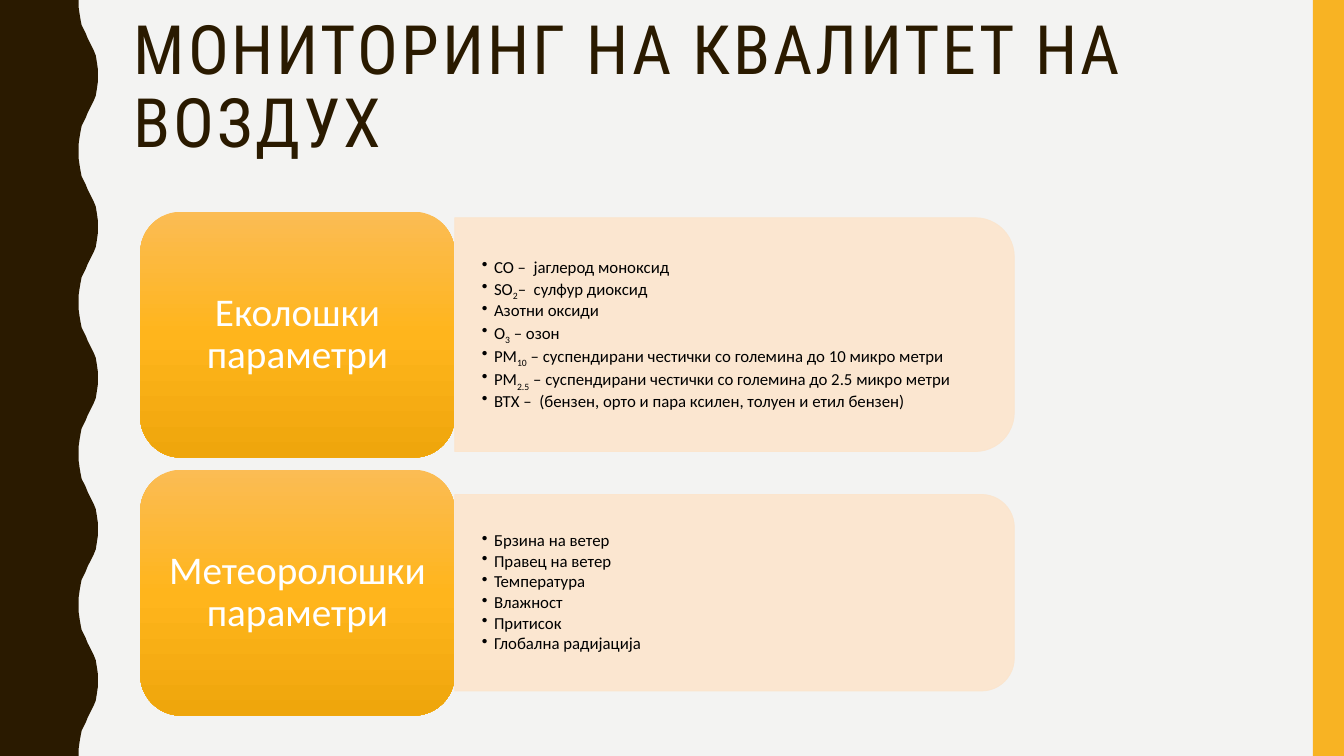
from lxml.etree import SubElement
from pptx import Presentation
from pptx.dml.color import RGBColor
from pptx.enum.shapes import MSO_SHAPE
from pptx.enum.text import MSO_ANCHOR, PP_ALIGN
from pptx.oxml.ns import qn
from pptx.util import Inches, Pt

DARK, GOLD, PEACH = "2A1A00", "F8B323", "FCE5CD"
LABEL_GRADIENT = [(0, "FBBC54"), (50, "FFB51C"), (100, "EFA60C")]
WAVE_PERIOD, WAVE_COUNT = 1.5, 5
WAVE_RISE = [(0.78, 0), (0.78, 0.07), (0.79, 0.14), (0.8, 0.2), (0.81, 0.25),
             (0.83, 0.29), (0.85, 0.33), (0.87, 0.38), (0.89, 0.42), (0.91, 0.46),
             (0.93, 0.5), (0.95, 0.55), (0.96, 0.61), (0.97, 0.68), (0.97, 0.75)]
LABEL_LEFT, LABEL_WIDTH, LABEL_HEIGHT = 1.39, 3.12, 2.44
FIRST_LABEL_TOP, LABEL_PITCH = 2.1, 2.56
PANEL_LEFT, PANEL_WIDTH = LABEL_LEFT + LABEL_WIDTH, 5.55

TOPICS = [
    ("Еколошки параметри", 2.32, 5.43, [
        "CO –  јаглерод моноксид",
        "SO_2_–  сулфур диоксид",
        "Азотни оксиди",
        "O_3_ – озон",
        "PM_10_ – суспендирани честички со големина до 10 микро метри",
        "PM_2.5_ – суспендирани честички со големина до 2.5 микро метри",
        "BTX –  (бензен, орто и пара ксилен, толуен и етил бензен)",
    ]),
    ("Метеоролошки параметри", 1.95, 5.45, [
        "Брзина на ветер",
        "Правец на ветер",
        "Температура",
        "Влажност",
        "Притисок",
        "Глобална радијација",
    ]),
]


def rgb(value):
    """Return the colour for a hex string."""
    return RGBColor.from_string(value)


def write_text(holder, lines, size, color, font="Calibri", align=PP_ALIGN.LEFT,
               inset=(0.1, 0.05), spacing=0, after=0, bullet=False):
    """Write lines into a shape; parts between underscores become subscripts."""
    frame = holder.text_frame
    frame.word_wrap = True
    frame.vertical_anchor = MSO_ANCHOR.MIDDLE
    frame.margin_left = frame.margin_right = Inches(inset[0])
    frame.margin_top = frame.margin_bottom = Inches(inset[1])
    for number, line in enumerate(lines):
        paragraph = frame.add_paragraph() if number else frame.paragraphs[0]
        paragraph.alignment = align
        paragraph.line_spacing = 0.9
        paragraph.space_after = Pt(after)
        if bullet:
            properties = paragraph._p.get_or_add_pPr()
            properties.set("marL", str(Inches(0.12)))
            properties.set("indent", str(-Inches(0.12)))
            SubElement(properties, qn("a:buChar"), char="•")
        for part, words in enumerate(line.split("_")):
            run = paragraph.add_run()
            run.text = words
            run.font.size = Pt(size)
            run.font.name = font
            run.font.color.rgb = rgb(color)
            if spacing:
                run.font._element.set("spc", str(spacing * 100))
            if part % 2:
                run.font._element.set("baseline", "-25000")


def add_box(slide, preset, left, top, width, height, fill):
    """Add a flat preset shape without outline."""
    box = slide.shapes.add_shape(preset, Inches(left), Inches(top),
                                 Inches(width), Inches(height))
    box.shadow.inherit = False
    box.fill.solid()
    box.fill.fore_color.rgb = rgb(fill)
    box.line.fill.background()
    return box


def add_textbox(slide, left, top, width, height, lines, **style):
    """Add a text box holding the given lines."""
    textbox = slide.shapes.add_textbox(Inches(left), Inches(top),
                                       Inches(width), Inches(height))
    write_text(textbox, lines, **style)


def add_wave(slide):
    """Add the dark band with the wavy right edge."""
    fall = [(x, WAVE_PERIOD - y) for x, y in reversed(WAVE_RISE[:-1])]
    edge = [(Inches(x), Inches(y + WAVE_PERIOD * wave))
            for wave in range(WAVE_COUNT) for x, y in WAVE_RISE + fall]
    builder = slide.shapes.build_freeform(0, 0)
    builder.add_line_segments(edge + [(0, Inches(7.5))], close=True)
    band = builder.convert_to_shape()
    band.shadow.inherit = False
    band.fill.solid()
    band.fill.fore_color.rgb = rgb(DARK)
    band.line.fill.background()


def add_panel(slide, middle, height, text_width, items):
    """Add a translucent panel, rounded on the right, with its bullet list."""
    center = PANEL_LEFT + PANEL_WIDTH / 2
    panel = add_box(slide, MSO_SHAPE.ROUND_2_SAME_RECTANGLE, center - height / 2,
                    middle - PANEL_WIDTH / 2, height, PANEL_WIDTH, PEACH)
    panel.rotation = 90
    panel.line.color.rgb = rgb(PEACH)
    panel.line.width = Pt(0.5)
    for tint in panel._element.spPr.iter(qn("a:srgbClr")):
        SubElement(tint, qn("a:alpha"), val="90000")
    text_height = height - 0.2
    add_textbox(slide, PANEL_LEFT, middle - text_height / 2, text_width, text_height,
                items, size=12, color="000000", inset=(0.27, 0.14), after=1.8,
                bullet=True)


def add_label(slide, top, caption):
    """Add a rounded gradient label."""
    label = add_box(slide, MSO_SHAPE.ROUNDED_RECTANGLE, LABEL_LEFT, top,
                    LABEL_WIDTH, LABEL_HEIGHT, GOLD)
    label.fill.gradient()
    label.fill.gradient_angle = 270
    stops = next(label._element.spPr.iter(qn("a:gsLst")))
    stops.clear()
    for position, color in LABEL_GRADIENT:
        stop = SubElement(stops, qn("a:gs"), pos=str(position * 1000))
        SubElement(stop, qn("a:srgbClr"), val=color)
    write_text(label, [caption], size=28, color="FFFFFF", align=PP_ALIGN.CENTER,
               inset=(0.12, 0.06))


def main():
    """Build the air quality monitoring slide."""
    presentation = Presentation()
    presentation.slide_width = Inches(13.33)
    presentation.slide_height = Inches(7.5)
    slide = presentation.slides.add_slide(presentation.slide_layouts[6])
    slide.background.fill.solid()
    slide.background.fill.fore_color.rgb = rgb("F3F3F2")

    add_wave(slide)
    add_box(slide, MSO_SHAPE.RECTANGLE, 13.02, 0, 0.31, 7.5, GOLD)
    add_textbox(slide, 1.23, 0.07, 11.13, 1.63, ["МОНИТОРИНГ НА КВАЛИТЕТ НА ВОЗДУХ"],
                size=48.6, color=DARK, font="Roboto Condensed", spacing=2)
    for number, (caption, height, text_width, items) in enumerate(TOPICS):
        top = FIRST_LABEL_TOP + number * LABEL_PITCH
        add_panel(slide, top + LABEL_HEIGHT / 2, height, text_width, items)
        add_label(slide, top, caption)
    presentation.save("out.pptx")


if __name__ == "__main__":
    main()
